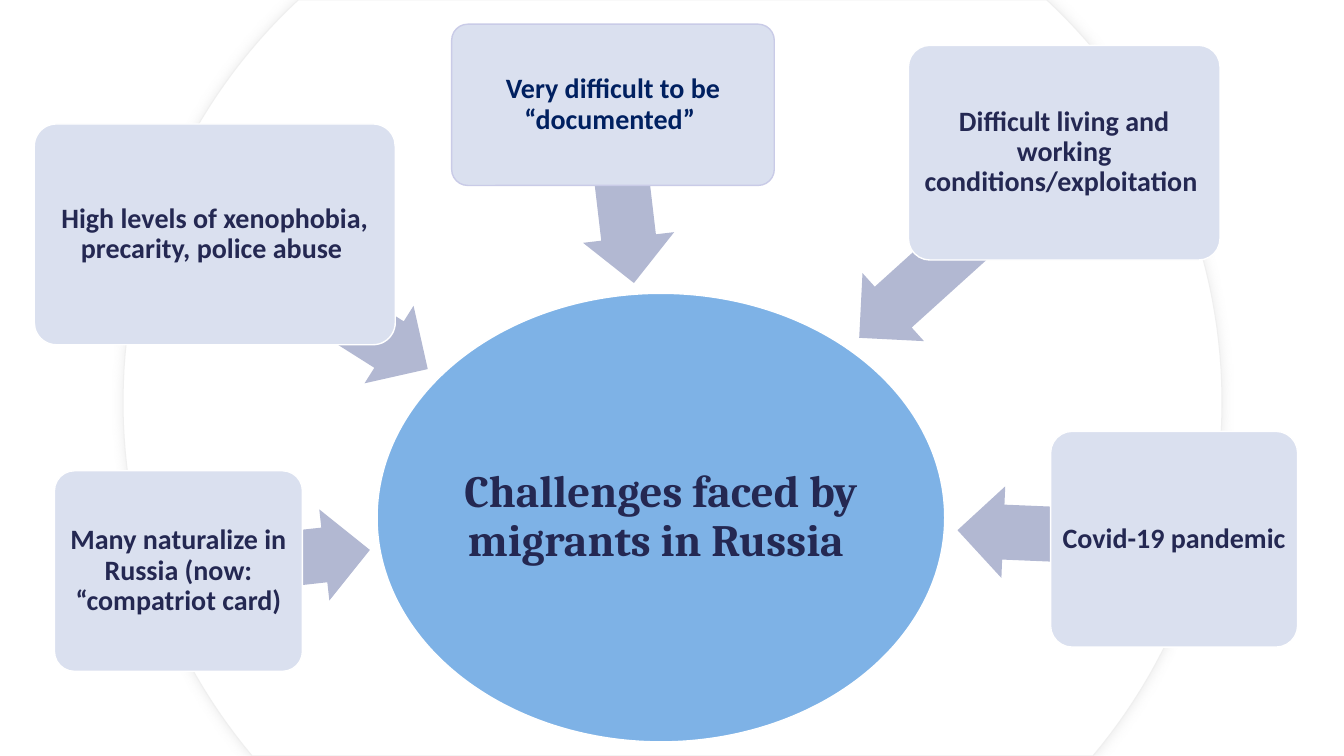
from math import asin, cos, pi, radians, sin

from lxml import etree
from pptx import Presentation
from pptx.dml.color import RGBColor
from pptx.enum.shapes import MSO_SHAPE
from pptx.enum.text import MSO_ANCHOR, PP_ALIGN
from pptx.oxml.ns import qn
from pptx.util import Inches, Pt

ELLIPSE = MSO_SHAPE.OVAL
CARD = MSO_SHAPE.ROUNDED_RECTANGLE
ARROW = MSO_SHAPE.LEFT_ARROW
MIDDLE = MSO_ANCHOR.MIDDLE
CENTER = PP_ALIGN.CENTER

SLIDE_WIDTH, SLIDE_HEIGHT = 13.33, 7.5
ARROW_HEIGHT = 0.91
COLORS = {
    "white": "FFFFFF",
    "backdrop_line": "EFEFEF",
    "halo": "D9D9D9",
    "hub": "7EB2E6",
    "arrow": "B2B8D2",
    "card": "DAE0EF",
    "card_line": "C9CBE7",
    "ink": "242852",
    "navy": "002060",
}

CHALLENGES = [
    ("Many naturalize in Russia (now: “compatriot card)",
     (0.54, 4.67, 2.46, 1.99), 1.91, 173.7, "white", "ink"),
    ("High levels of xenophobia, precarity, police abuse ",
     (0.34, 1.23, 3.58, 2.19), 2.5, 212.3, "white", "ink"),
    ("Very difficult to be “documented” ",
     (4.48, 0.24, 3.2, 1.6), 1.78, 263.3, "card_line", "navy"),
    ("Difficult living and working conditions/exploitation ",
     (9.01, 0.45, 3.09, 2.13), 2.74, 317.9, "white", "ink"),
    ("Covid-19 pandemic",
     (10.42, 4.28, 2.45, 2.14), 2.15, 2.4, "white", "ink"),
]


def color(name):
    return RGBColor.from_string(COLORS[name])


def paint(shape, fill, line=None, width=1):
    shape.shadow.inherit = False
    shape.fill.solid()
    shape.fill.fore_color.rgb = color(fill)
    if line:
        shape.line.color.rgb = color(line)
        shape.line.width = Pt(width)
    else:
        shape.line.fill.background()


def add_shape(page, kind, box, fill, line=None):
    shape = page.shapes.add_shape(kind, *(Inches(side) for side in box))
    paint(shape, fill, line)
    return shape


def write_text(shape, text, font, size, ink, margin):
    frame = shape.text_frame
    frame.word_wrap = True
    frame.vertical_anchor = MIDDLE
    frame.margin_left = frame.margin_right = Inches(margin)
    frame.margin_top = frame.margin_bottom = Inches(margin)
    para = frame.paragraphs[0]
    para.alignment = CENTER
    para.line_spacing = 0.9
    span = para.add_run()
    span.text = text
    span.font.name = font
    span.font.size = Pt(size)
    span.font.bold = True
    span.font.color.rgb = color(ink)


def add_halo(shape):
    effects = shape._element.spPr.find(qn("a:effectLst"))
    shadow = etree.SubElement(effects, qn("a:outerShdw"),
                              blurRad=str(Pt(8)), dist="0", dir="0")
    tint = etree.SubElement(shadow, qn("a:srgbClr"), val=COLORS["halo"])
    etree.SubElement(tint, qn("a:alpha"), val="50000")


def add_backdrop(page, box, center_y):
    left, top, width, height = box
    radius = width / 2
    center_x = left + radius
    start = asin((top - center_y) / radius)
    end = asin((top + height - center_y) / radius)
    steps = 60
    angles = [start + (end - start) * step / steps for step in range(steps + 1)]
    angles += [pi - angle for angle in reversed(angles)]
    points = [(Inches(center_x + radius * cos(angle)),
               Inches(center_y + radius * sin(angle))) for angle in angles]
    builder = page.shapes.build_freeform(*points[0])
    builder.add_line_segments(points[1:], close=True)
    disc = builder.convert_to_shape()
    paint(disc, "white", "backdrop_line", 0.75)
    add_halo(disc)


def add_hub(page, box):
    hub = add_shape(page, ELLIPSE, box, "hub", "white")
    write_text(hub, "Challenges faced by migrants in Russia ", "Cambria", 32, "ink", 0.02)


def add_challenge(page, text, box, reach, angle, line, ink):
    left, top, width, height = box
    turn = radians(angle)
    middle_x = left + width / 2 - reach / 2 * cos(turn)
    middle_y = top + height / 2 - reach / 2 * sin(turn)
    arrow_box = (middle_x - reach / 2, middle_y - ARROW_HEIGHT / 2, reach, ARROW_HEIGHT)
    arrow = add_shape(page, ARROW, arrow_box, "arrow")
    arrow.adjustments[0] = 0.6
    arrow.adjustments[1] = 0.5
    arrow.rotation = angle
    card = add_shape(page, CARD, box, "card", line)
    card.adjustments[0] = 0.1
    write_text(card, text, "Calibri", 20, ink, 0.04)


def main():
    deck = Presentation()
    deck.slide_width = Inches(SLIDE_WIDTH)
    deck.slide_height = Inches(SLIDE_HEIGHT)
    page = deck.slides.add_slide(deck.slide_layouts[6])
    add_backdrop(page, (1.22, 0, 10.9, SLIDE_HEIGHT), 3.99)
    add_hub(page, (3.74, 2.91, 5.63, 4.45))
    for challenge in CHALLENGES:
        add_challenge(page, *challenge)
    deck.save("out.pptx")


if __name__ == "__main__":
    main()
